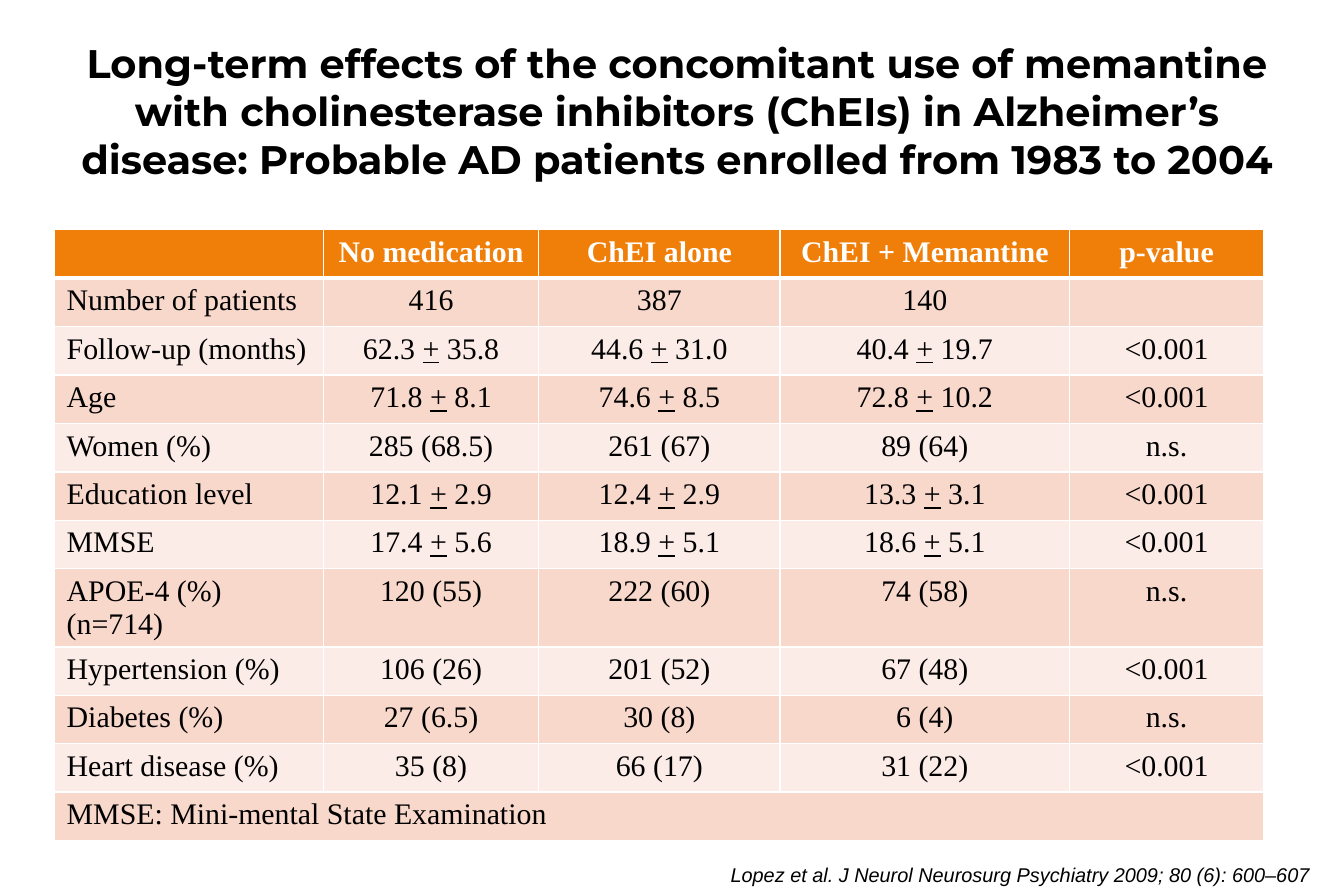
from dataclasses import dataclass

import pptx
import pptx.dml.color
import pptx.enum.text
import pptx.oxml
import pptx.oxml.ns
import pptx.util

Pt = pptx.util.Pt
Align = pptx.enum.text.PP_ALIGN
Anchor = pptx.enum.text.MSO_ANCHOR


@dataclass(frozen=True)
class Theme:
    ink: str = "000000"
    paper: str = "FFFFFF"
    header: str = "F07F09"
    bands: tuple = ("F9D8CC", "FCECE7")
    title_font: str = "Montserrat"
    table_font: str = "Times New Roman"
    source_font: str = "Arial"
    title_size: int = 24
    table_size: int = 18
    source_size: int = 12
    rule: int = 1
    header_rule: int = 3


THEME = Theme()

TITLE = (
    "Long-term effects of the concomitant use of memantine with cholinesterase "
    "inhibitors (ChEIs) in Alzheimer’s disease: Probable AD patients enrolled "
    "from 1983 to 2004"
)
ROWS = [
    ("", "No medication", "ChEI alone", "ChEI + Memantine", "p-value"),
    ("Number of patients", "416", "387", "140", ""),
    ("Follow-up (months)", "62.3 + 35.8", "44.6 + 31.0", "40.4 + 19.7", "<0.001"),
    ("Age", "71.8 + 8.1", "74.6 + 8.5", "72.8 + 10.2", "<0.001"),
    ("Women (%)", "285 (68.5)", "261 (67)", "89 (64)", "n.s."),
    ("Education level", "12.1 + 2.9", "12.4 + 2.9", "13.3 + 3.1", "<0.001"),
    ("MMSE", "17.4 + 5.6", "18.9 + 5.1", "18.6 + 5.1", "<0.001"),
    ("APOE-4 (%) (n=714)", "120 (55)", "222 (60)", "74 (58)", "n.s."),
    ("Hypertension (%)", "106 (26)", "201 (52)", "67 (48)", "<0.001"),
    ("Diabetes (%)", "27 (6.5)", "30 (8)", "6 (4)", "n.s."),
    ("Heart disease (%)", "35 (8)", "66 (17)", "31 (22)", "<0.001"),
    ("MMSE: Mini-mental State Examination", "", "", "", ""),
]
COLUMN_WIDTHS = (162, 129.6, 145.6, 174.4, 117)
SOURCE = "Lopez et al. J Neurol Neurosurg Psychiatry 2009; 80 (6): 600–607"


def rgb(value):
    return pptx.dml.color.RGBColor.from_string(value)


def format_font(font, name, size, color, bold=False, italic=False):
    font.name, font.size = name, Pt(size)
    font.bold, font.italic = bold, italic
    font.color.rgb = rgb(color)


def add_title(slide, left, top, width, height):
    title = slide.shapes.title
    title.left, title.top = Pt(left), Pt(top)
    title.width, title.height = Pt(width), Pt(height)
    frame = title.text_frame
    frame.text = TITLE
    frame.word_wrap = True
    frame.auto_size = pptx.enum.text.MSO_AUTO_SIZE.NONE
    frame.vertical_anchor = Anchor.MIDDLE
    para = frame.paragraphs[0]
    para.alignment = Align.CENTER
    format_font(para.runs[0].font, THEME.title_font, THEME.title_size, THEME.ink, bold=True)


def set_borders(cell, top, bottom):
    properties = cell._tc.get_or_add_tcPr()
    widths = {"L": THEME.rule, "R": THEME.rule, "T": top, "B": bottom}
    for index, (side, width) in enumerate(widths.items()):
        line = pptx.oxml.parse_xml(
            f'<a:ln{side} {pptx.oxml.ns.nsdecls("a")} w="{Pt(width)}"><a:solidFill>'
            f'<a:srgbClr val="{THEME.paper}"/></a:solidFill></a:ln{side}>'
        )
        properties.insert(index, line)


def fill_cell(cell, text, row, column):
    is_header = row == 0
    cell.fill.solid()
    cell.fill.fore_color.rgb = rgb(THEME.header if is_header else THEME.bands[(row - 1) % 2])
    set_borders(
        cell,
        top=THEME.header_rule if row == 1 else THEME.rule,
        bottom=THEME.header_rule if is_header else THEME.rule,
    )
    para = cell.text_frame.paragraphs[0]
    para.alignment = Align.CENTER if column else Align.LEFT
    color = THEME.paper if is_header else THEME.ink
    format_font(para.font, THEME.table_font, THEME.table_size, color, bold=is_header)
    # An underlined plus stands for plus-minus in the body
    mean, plus, deviation = (text, "", "") if is_header else text.partition("+")
    for part in filter(None, (mean, plus, deviation)):
        span = para.add_run()
        span.text = part
        format_font(span.font, THEME.table_font, THEME.table_size, color, bold=is_header)
        if part == "+":
            span.font.underline = True


def add_patient_table(slide, left, top, width, height):
    frame = slide.shapes.add_table(
        len(ROWS), len(COLUMN_WIDTHS), Pt(left), Pt(top), Pt(width), Pt(height)
    )
    table = frame.table
    for column, column_width in zip(table.columns, COLUMN_WIDTHS):
        column.width = Pt(column_width)
    for row, texts in enumerate(ROWS):
        table.rows[row].height = Pt(height / len(ROWS))
        for column, text in enumerate(texts):
            fill_cell(table.cell(row, column), text, row, column)
    # The abbreviation note spans the whole last row
    last = len(ROWS) - 1
    table.cell(last, 0).merge(table.cell(last, len(COLUMN_WIDTHS) - 1))


def add_source(slide, left, top, width, height):
    box = slide.shapes.add_textbox(Pt(left), Pt(top), Pt(width), Pt(height))
    frame = box.text_frame
    frame.text = SOURCE
    frame.word_wrap = False
    frame.margin_left = frame.margin_right = Pt(8.64)
    frame.margin_top = frame.margin_bottom = Pt(4.32)
    para = frame.paragraphs[0]
    para.alignment = Align.RIGHT
    format_font(para.runs[0].font, THEME.source_font, THEME.source_size, THEME.ink, italic=True)


def build_study_slide(deck):
    slide = deck.slides.add_slide(deck.slide_layouts.get_by_name("Title Only"))
    add_title(slide, 21, 21.6, 774, 90)
    add_patient_table(slide, 33, 138.4, sum(COLUMN_WIDTHS), 350.4)
    add_source(slide, 429, 515.5, 369.5, 23)


def main():
    deck = pptx.Presentation()
    deck.slide_width, deck.slide_height = Pt(810), Pt(540)
    build_study_slide(deck)
    deck.save("out.pptx")


if __name__ == "__main__":
    main()
